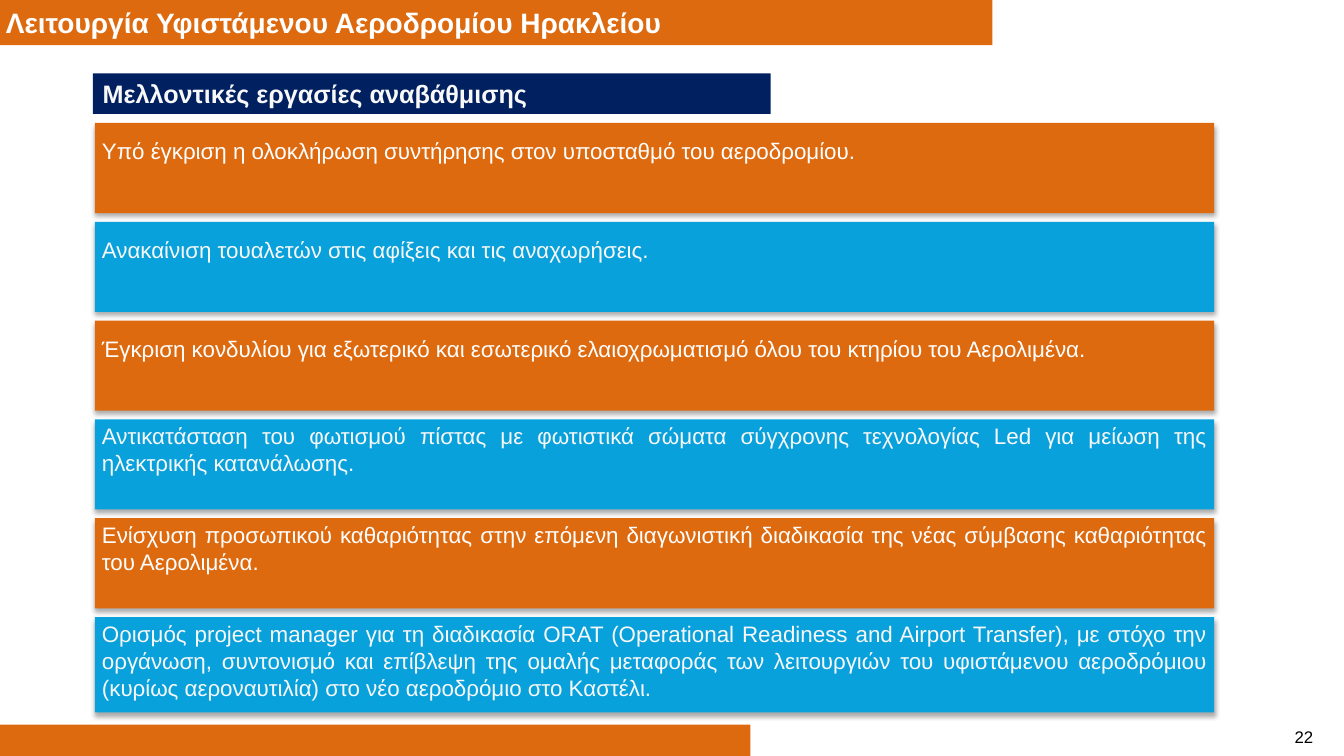
from lxml import etree
from pptx import Presentation
from pptx.dml.color import RGBColor
from pptx.enum.shapes import MSO_SHAPE
from pptx.enum.text import MSO_ANCHOR, MSO_AUTO_SIZE, PP_ALIGN
from pptx.oxml import parse_xml
from pptx.oxml.ns import nsdecls, qn
from pptx.util import Cm, Pt

RECTANGLE = MSO_SHAPE.RECTANGLE
TOP, MIDDLE = MSO_ANCHOR.TOP, MSO_ANCHOR.MIDDLE
FIT_SHAPE = MSO_AUTO_SIZE.SHAPE_TO_FIT_TEXT
LEFT, CENTER, JUSTIFY = PP_ALIGN.LEFT, PP_ALIGN.CENTER, PP_ALIGN.JUSTIFY

ORANGE = RGBColor(0xDE, 0x6A, 0x10)
BLUE = RGBColor(0x08, 0xA1, 0xDC)
NAVY = RGBColor(0x00, 0x20, 0x60)
WHITE = RGBColor(0xFF, 0xFF, 0xFF)
OFF_WHITE = RGBColor(0xF8, 0xF8, 0xF8)
BLACK = RGBColor(0x00, 0x00, 0x00)

FONT = "Arial"
CARD_LEFT, CARD_TOP, CARD_WIDTH = 2.39, 3.1, 28.22
CARD_HEIGHT, LAST_CARD_HEIGHT, CARD_PITCH = 2.27, 2.4, 2.49
SINGLE_LINE_SPACING = Pt(27)

SINGLE_LINE_WORKS = [
    "Υπό έγκριση η ολοκλήρωση συντήρησης στον υποσταθμό του αεροδρομίου.",
    "Ανακαίνιση τουαλετών στις αφίξεις και τις αναχωρήσεις.",
    "Έγκριση κονδυλίου για εξωτερικό και εσωτερικό ελαιοχρωματισμό όλου του "
    "κτηρίου του Αερολιμένα.",
]
LONGER_WORKS = [
    "Αντικατάσταση του φωτισμού πίστας με φωτιστικά σώματα σύγχρονης "
    "τεχνολογίας Led για μείωση της ηλεκτρικής κατανάλωσης.",
    "Ενίσχυση προσωπικού καθαριότητας στην επόμενη διαγωνιστική διαδικασία "
    "της νέας σύμβασης καθαριότητας του Αερολιμένα.",
    "Ορισμός project manager για τη διαδικασία ORAT (Operational Readiness "
    "and Airport Transfer), με στόχο την οργάνωση, συντονισμό και επίβλεψη "
    "της ομαλής μεταφοράς των λειτουργιών του υφιστάμενου αεροδρόμιου "
    "(κυρίως αεροναυτιλία) στο νέο αεροδρόμιο στο Καστέλι.",
]


def add_bar(slide, left, top, width, height, color):
    bar = slide.shapes.add_shape(
        RECTANGLE, Cm(left), Cm(top), Cm(width), Cm(height))
    bar.shadow.inherit = False
    bar.fill.solid()
    bar.fill.fore_color.rgb = color
    bar.line.fill.background()
    return bar


def write(holder, text, size, color, margins,
          align=LEFT, anchor=TOP, bold=False):
    frame = holder.text_frame
    frame.word_wrap = True
    frame.vertical_anchor = anchor
    side, edge = margins
    frame.margin_left = frame.margin_right = Cm(side)
    frame.margin_top = frame.margin_bottom = Cm(edge)
    paragraph = frame.paragraphs[0]
    paragraph.text = text
    paragraph.alignment = align
    paragraph.font.name = FONT
    paragraph.font.size = Pt(size)
    paragraph.font.bold = bold
    paragraph.font.color.rgb = color
    return frame


def add_heading(slide, box, fill, text, size, color, margins, anchor):
    heading = add_bar(slide, *box, fill)
    frame = write(heading, text, size, color, margins,
                  anchor=anchor, bold=True)
    frame.auto_size = FIT_SHAPE


def add_soft_shadow(card):
    effects = card._element.spPr.find(qn("a:effectLst"))
    shadow = parse_xml(
        f'<a:outerShdw {nsdecls("a")} blurRad="{Pt(3.5)}" dist="{Pt(2.2)}" '
        'dir="5400000" rotWithShape="0"/>')
    tint = etree.SubElement(shadow, qn("a:srgbClr"), val=str(BLACK))
    etree.SubElement(tint, qn("a:alpha"), val="32000")
    effects.append(shadow)


def add_work_cards(slide):
    works = SINGLE_LINE_WORKS + LONGER_WORKS
    for index, work in enumerate(works):
        fill, color = [(ORANGE, WHITE), (BLUE, OFF_WHITE)][index % 2]
        height = LAST_CARD_HEIGHT if work == works[-1] else CARD_HEIGHT
        card = add_bar(slide, CARD_LEFT, CARD_TOP + index * CARD_PITCH,
                       CARD_WIDTH, height, fill)
        add_soft_shadow(card)
        frame = write(card, work, 16, color, (0.18, 0.08), JUSTIFY)
        if work in SINGLE_LINE_WORKS:
            frame.paragraphs[0].line_spacing = SINGLE_LINE_SPACING


def add_page_number(slide):
    number = slide.shapes.add_textbox(Cm(32.44), Cm(18.16), Cm(0.86), Cm(0.79))
    frame = write(number, "22", 12, BLACK, (0.15, 0.15), CENTER)
    frame.auto_size = FIT_SHAPE


def main():
    deck = Presentation()
    deck.slide_width, deck.slide_height = Cm(33.88), Cm(19.05)
    slide = deck.slides.add_slide(deck.slide_layouts[6])
    add_page_number(slide)
    add_heading(slide, (0, 0, 25.02, 1.14), ORANGE,
                "Λειτουργία Υφιστάμενου Αεροδρομίου Ηρακλείου",
                20, WHITE, (0.15, 0.15), MIDDLE)
    add_bar(slide, 0, 18.26, 18.92, 0.79, ORANGE)
    add_work_cards(slide)
    add_heading(slide, (2.34, 1.85, 17.09, 1.02), NAVY,
                "Μελλοντικές εργασίες αναβάθμισης",
                18, OFF_WHITE, (0.25, 0.13), TOP)
    deck.save("out.pptx")


if __name__ == "__main__":
    main()
